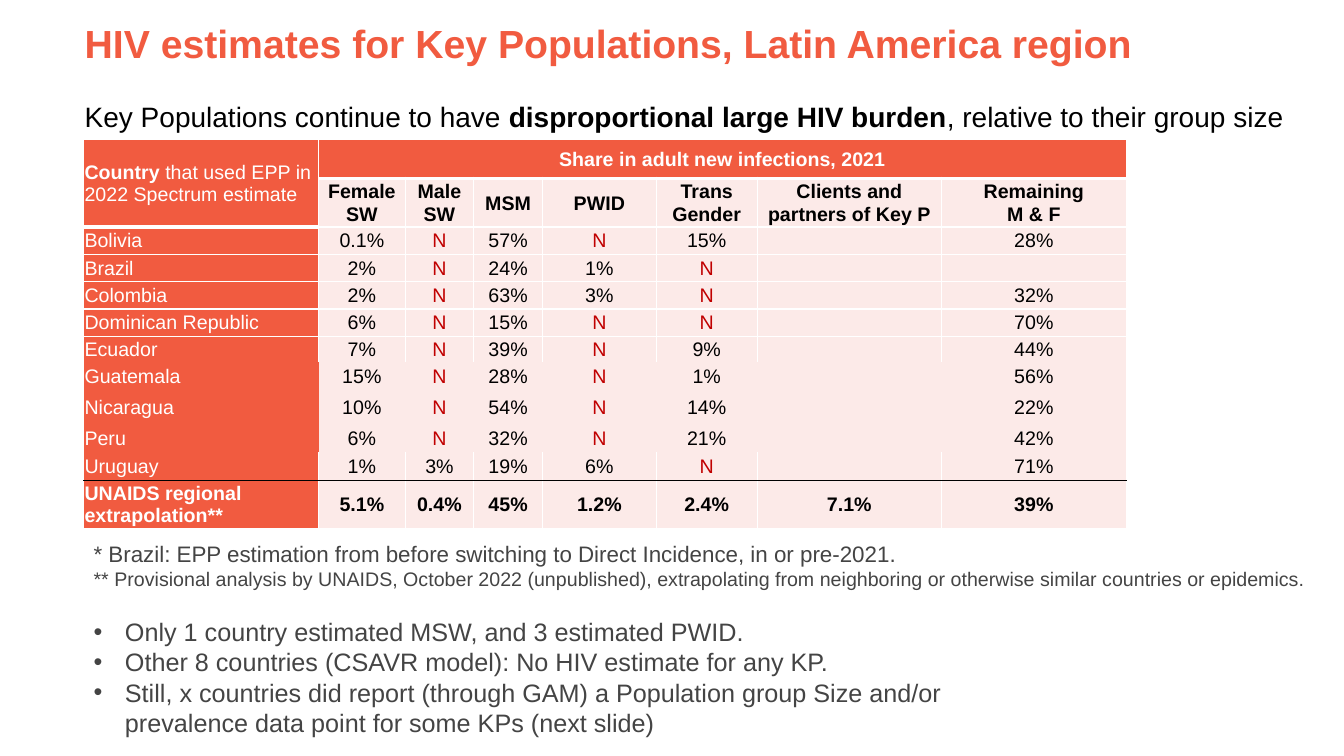
from dataclasses import dataclass

from lxml import etree
from pptx import Presentation
from pptx.dml.color import RGBColor
from pptx.enum.text import MSO_ANCHOR, MSO_AUTO_SIZE, PP_ALIGN
from pptx.oxml.ns import qn
from pptx.util import Cm, Pt

LEFT, CENTER = PP_ALIGN.LEFT, PP_ALIGN.CENTER
MIDDLE, TOP = MSO_ANCHOR.MIDDLE, MSO_ANCHOR.TOP
NO_AUTOFIT = MSO_AUTO_SIZE.NONE


@dataclass(frozen=True)
class Theme:
    font: str = "Arial"
    accent: str = "F15B40"
    tint: str = "FCEAE8"
    white: str = "FFFFFF"
    black: str = "000000"
    red: str = "C00000"
    grey: str = "444444"
    title: int = 28
    subtitle: int = 20
    bullet: int = 18
    note: int = 16
    small: int = 14


COLUMN_WIDTHS = [5.92, 2.18, 1.73, 1.73, 2.87, 2.54, 4.65, 4.65]
ROW_HEIGHTS = [0.99, 1.22] + [0.69] * 4 + [0.64, 0.71, 0.86, 0.71, 0.71, 1.22]
GROUPS = ["Female SW", "Male SW", "MSM", "PWID", "Trans Gender",
          "Clients and partners of Key P", "Remaining\nM & F"]
SHARES = [
    ["Bolivia", "0.1%", "N", "57%", "N", "15%", "", "28%"],
    ["Brazil", "2%", "N", "24%", "1%", "N", "", ""],
    ["Colombia", "2%", "N", "63%", "3%", "N", "", "32%"],
    ["Dominican Republic", "6%", "N", "15%", "N", "N", "", "70%"],
    ["Ecuador", "7%", "N", "39%", "N", "9%", "", "44%"],
    ["Guatemala", "15%", "N", "28%", "N", "1%", "", "56%"],
    ["Nicaragua", "10%", "N", "54%", "N", "14%", "", "22%"],
    ["Peru", "6%", "N", "32%", "N", "21%", "", "42%"],
    ["Uruguay", "1%", "3%", "19%", "6%", "N", "", "71%"],
    ["UNAIDS regional extrapolation**", "5.1%", "0.4%", "45%", "1.2%", "2.4%", "7.1%", "39%"],
]
BULLETS = [
    "Only 1 country estimated MSW, and 3 estimated PWID.",
    "Other 8 countries (CSAVR model): No HIV estimate for any KP.",
    "Still, x countries did report (through GAM) a Population group Size and/or\n"
    "prevalence data point for some KPs (next slide)",
]


class SlideBuilder:
    def __init__(self, slide, theme):
        self.slide = slide
        self.theme = theme

    def apply(self, target, values):
        for attribute, value in values.items():
            setattr(target, attribute, value)

    def add_text(self, paragraph, runs, size, color, **layout):
        self.apply(paragraph, layout)
        for text, bold in runs:
            for index, line in enumerate(text.split("\n")):
                if index:
                    paragraph.add_line_break()
                run = paragraph.add_run()
                run.text = line
                self.apply(run.font, {"name": self.theme.font, "size": Pt(size), "bold": bold})
                run.font.color.rgb = RGBColor.from_string(color)

    def place(self, shape, left, top, width, height, anchor):
        self.apply(shape, {"left": Cm(left), "top": Cm(top),
                           "width": Cm(width), "height": Cm(height)})
        frame = shape.text_frame
        self.apply(frame, {"word_wrap": True, "auto_size": NO_AUTOFIT, "vertical_anchor": anchor})
        return frame

    def title(self, heading, subtitle_runs):
        theme = self.theme
        frame = self.place(self.slide.shapes.title, 1.88, 0.33, 31.06, 3.18, MIDDLE)
        self.add_text(frame.paragraphs[0], [(heading, True)], theme.title, theme.accent,
                      alignment=LEFT)
        self.add_text(frame.add_paragraph(), subtitle_runs, theme.subtitle, theme.black,
                      alignment=LEFT, space_before=Pt(23))

    def border(self, cell, **edges):
        properties = cell._tc.get_or_add_tcPr()
        for side in "LRTB":
            color, width = edges.get(side, (None, 1))
            line = etree.SubElement(properties, qn(f"a:ln{side}"), w=str(Pt(width)))
            if color:
                fill = etree.SubElement(line, qn("a:solidFill"))
                etree.SubElement(fill, qn("a:srgbClr"), val=color)
            else:
                etree.SubElement(line, qn("a:noFill"))

    def cell(self, cell, runs, fill, color, alignment, edges):
        self.border(cell, **edges)
        cell.fill.solid()
        cell.fill.fore_color.rgb = RGBColor.from_string(fill)
        self.apply(cell, {"vertical_anchor": MIDDLE, "margin_left": Cm(0.02),
                          "margin_right": Cm(0.02), "margin_top": Cm(0.02), "margin_bottom": 0})
        paragraph = cell.text_frame.paragraphs[0]
        self.add_text(paragraph, runs, self.theme.small, color,
                      alignment=alignment, space_after=Pt(2))
        if not runs:
            etree.SubElement(paragraph._p, qn("a:endParaRPr"), sz=str(self.theme.small * 100))

    def row_edges(self, row):
        white, black = (self.theme.white, 1), (self.theme.black, 1)
        edges = {"L": white, "R": white, "T": white, "B": white}
        last = len(ROW_HEIGHTS) - 1
        special = {
            0: {**edges, "B": (self.theme.white, 3)},
            last - 5: {"L": white, "R": white, "T": white},
            last - 4: {}, last - 3: {}, last - 2: {},
            last - 1: {"L": white, "R": white, "B": black},
            last: {**edges, "T": black},
        }
        return special.get(row, edges)

    def table(self, left, top):
        theme = self.theme
        table = self.slide.shapes.add_table(
            len(ROW_HEIGHTS), len(COLUMN_WIDTHS), Cm(left), Cm(top),
            Cm(sum(COLUMN_WIDTHS)), Cm(sum(ROW_HEIGHTS))).table
        for column, width in zip(table.columns, COLUMN_WIDTHS):
            column.width = Cm(width)
        for row, height in zip(table.rows, ROW_HEIGHTS):
            row.height = Cm(height)
        heading = ["", "Share in adult new infections, 2021"] + [""] * 6
        for r, values in enumerate([heading, [""] + GROUPS] + SHARES):
            bold = r < 2 or r == len(ROW_HEIGHTS) - 1
            for c, text in enumerate(values):
                colored = c == 0 or r == 0
                color = theme.white if colored else theme.red if text == "N" else theme.black
                runs = [(text, bold)] if text else []
                if r == c == 0:
                    runs = [("Country ", True), ("that used EPP in 2022 Spectrum estimate", False)]
                self.cell(table.cell(r, c), runs, theme.accent if colored else theme.tint, color,
                          LEFT if c == 0 else CENTER,
                          self.row_edges(0 if c == 0 and r < 2 else r))
        table.cell(0, 0).merge(table.cell(1, 0))
        table.cell(0, 1).merge(table.cell(0, len(COLUMN_WIDTHS) - 1))

    def notes(self, footnotes, bullets, left, top, width, height):
        theme = self.theme
        box = self.slide.shapes.add_textbox(0, 0, 0, 0)
        frame = self.place(box, left, top, width, height, TOP)
        for index, (text, size) in enumerate(footnotes):
            paragraph = frame.add_paragraph() if index else frame.paragraphs[0]
            self.add_text(paragraph, [(text, False)], size, theme.grey)
        for index, text in enumerate(bullets):
            paragraph = frame.add_paragraph()
            properties = paragraph._p.get_or_add_pPr()
            self.apply(paragraph, {"space_before": Pt(0 if index else 18.4)})
            properties.set("marL", str(Cm(0.79)))
            properties.set("indent", str(-Cm(0.79)))
            etree.SubElement(properties, qn("a:buFont"), typeface=theme.font)
            etree.SubElement(properties, qn("a:buChar"), char="•")
            self.add_text(paragraph, [(text, False)], theme.bullet, theme.grey)


def main():
    presentation = Presentation()
    presentation.slide_width, presentation.slide_height = Cm(33.87), Cm(19.05)
    theme = Theme()
    builder = SlideBuilder(presentation.slides.add_slide(presentation.slide_layouts[5]), theme)
    builder.title("HIV estimates for Key Populations, Latin America region",
                  [("Key Populations continue to have ", False),
                   ("disproportional large HIV burden", True),
                   (", relative to their group size", False)])
    builder.table(2.11, 3.51)
    builder.notes(
        [("* Brazil: EPP estimation from before switching to Direct Incidence, in or pre-2021.",
          theme.note),
         ("** Provisional analysis by UNAIDS, October 2022 (unpublished), extrapolating from "
          "neighboring or otherwise similar countries or epidemics.", theme.small)],
        BULLETS, 2.11, 13.49, 31.42, 5.31)
    presentation.save("out.pptx")


if __name__ == "__main__":
    main()
